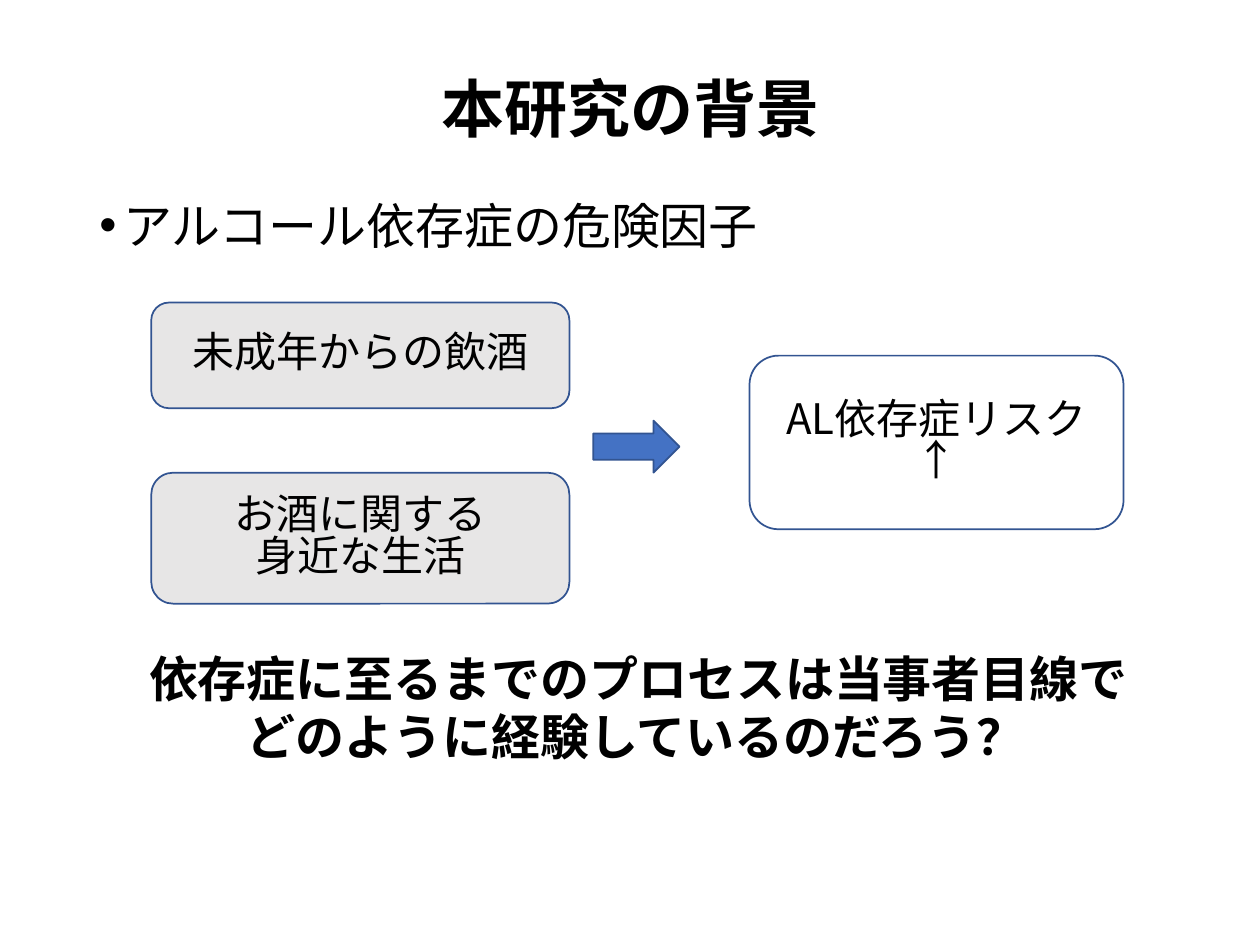
from pptx import Presentation
from pptx.dml.color import RGBColor
from pptx.enum.shapes import MSO_SHAPE
from pptx.enum.text import MSO_ANCHOR, MSO_AUTO_SIZE, PP_ALIGN
from pptx.oxml.ns import qn
from pptx.util import Cm, Pt
from lxml import etree

ROUND, ARROW = MSO_SHAPE.ROUNDED_RECTANGLE, MSO_SHAPE.RIGHT_ARROW
MID, TOP = MSO_ANCHOR.MIDDLE, MSO_ANCHOR.TOP
LEFT, CENTER = PP_ALIGN.LEFT, PP_ALIGN.CENTER

BLACK = RGBColor(0x00, 0x00, 0x00)
WHITE = RGBColor(0xFF, 0xFF, 0xFF)
GREY = RGBColor(0xE7, 0xE6, 0xE6)
BLUE = RGBColor(0x44, 0x72, 0xC4)
NAVY = RGBColor(0x32, 0x54, 0x91)
FACE = "Noto Sans CJK JP"


def put(obj, **vals):
    """Set each named value on the object."""
    for name, val in vals.items():
        setattr(obj, name, val)


def place(obj, box):
    put(obj, **dict(zip(("left", "top", "width", "height"), map(Cm, box))))


def write(par, text, size, bold=False, **form):
    """Write one run, with Latin and East Asian faces alike."""
    put(par, **form)
    run = par.add_run()
    run.text = text
    put(run.font, name=FACE, size=Pt(size), bold=bold)
    run.font.color.rgb = BLACK
    etree.SubElement(run.font._element, qn("a:ea"), typeface=FACE)


def indent(par, left, first, mark=None):
    """Set the indents and the bullet of a paragraph."""
    props = par._p.get_or_add_pPr()
    props.set("marL", str(Cm(left)))
    props.set("indent", str(Cm(first)))
    if mark:
        etree.SubElement(props, qn("a:buFont"), typeface="Arial")
        etree.SubElement(props, qn("a:buChar"), char=mark)
    else:
        etree.SubElement(props, qn("a:buNone"))


def head(slide, box):
    title = slide.shapes.title
    place(title, box)
    put(title.text_frame, vertical_anchor=MID, auto_size=MSO_AUTO_SIZE.NONE)
    write(title.text_frame.paragraphs[0], "本研究の背景", 36, True,
          alignment=CENTER, line_spacing=0.9)


def body(slide, box):
    """Bullet above the diagram, question below it."""
    holder = slide.placeholders[1]
    place(holder, box)
    frame = holder.text_frame
    put(frame, vertical_anchor=TOP, auto_size=MSO_AUTO_SIZE.NONE)
    rows = [
        ("アルコール依存症の危険因子", False, 0, 0.48, -0.48, "•"),
        ("依存症に至るまでのプロセスは当事者目線で", True, 232, 1, 0, None),
        ("どのように経験しているのだろう？", True, 6.5, 2.97, 0, None),
    ]
    for i, (text, bold, gap, left, first, mark) in enumerate(rows):
        par = frame.add_paragraph() if i else frame.paragraphs[0]
        write(par, text, 28, bold, alignment=LEFT, line_spacing=0.8,
              space_before=Pt(gap))
        indent(par, left, first, mark)


def block(slide, kind, box, fill, lines=()):
    """Outlined shape with centred lines of text."""
    shape = slide.shapes.add_shape(kind, *map(Cm, box))
    shape.shadow.inherit = False
    shape.fill.solid()
    shape.fill.fore_color.rgb = fill
    shape.line.color.rgb = NAVY
    shape.line.width = Pt(1)
    frame = shape.text_frame
    put(frame, vertical_anchor=MID, word_wrap=True)
    for i, text in enumerate(lines):
        par = frame.add_paragraph() if i else frame.paragraphs[0]
        write(par, text, 24, alignment=CENTER, line_spacing=0.82)


def flow(slide, x, y):
    """Two causes, an arrow and the outcome, from a top left corner."""
    wide = 8.43
    block(slide, ROUND, (x, y, wide, 2.13), GREY, ["未成年からの飲酒"])
    block(slide, ROUND, (x, y + 3.43, wide, 2.64), GREY,
          ["お酒に関する", "身近な生活"])
    block(slide, ROUND, (x + 12.06, y + 1.07, 7.54, 3.5), WHITE,
          ["AL依存症リスク", "↑"])
    block(slide, ARROW, (x + wide + 0.48, y + 2.38, 1.74, 1.05), BLUE)


def main():
    deck = Presentation()
    put(deck, slide_width=Cm(25.4), slide_height=Cm(19.05))
    slide = deck.slides.add_slide(deck.slide_layouts[1])
    head(slide, (1.75, 1.02, 21.9, 2.49))
    body(slide, (1.75, 4.04, 21.9, 13.64))
    flow(slide, 3.05, 6.1)
    deck.save("out.pptx")


if __name__ == "__main__":
    main()
